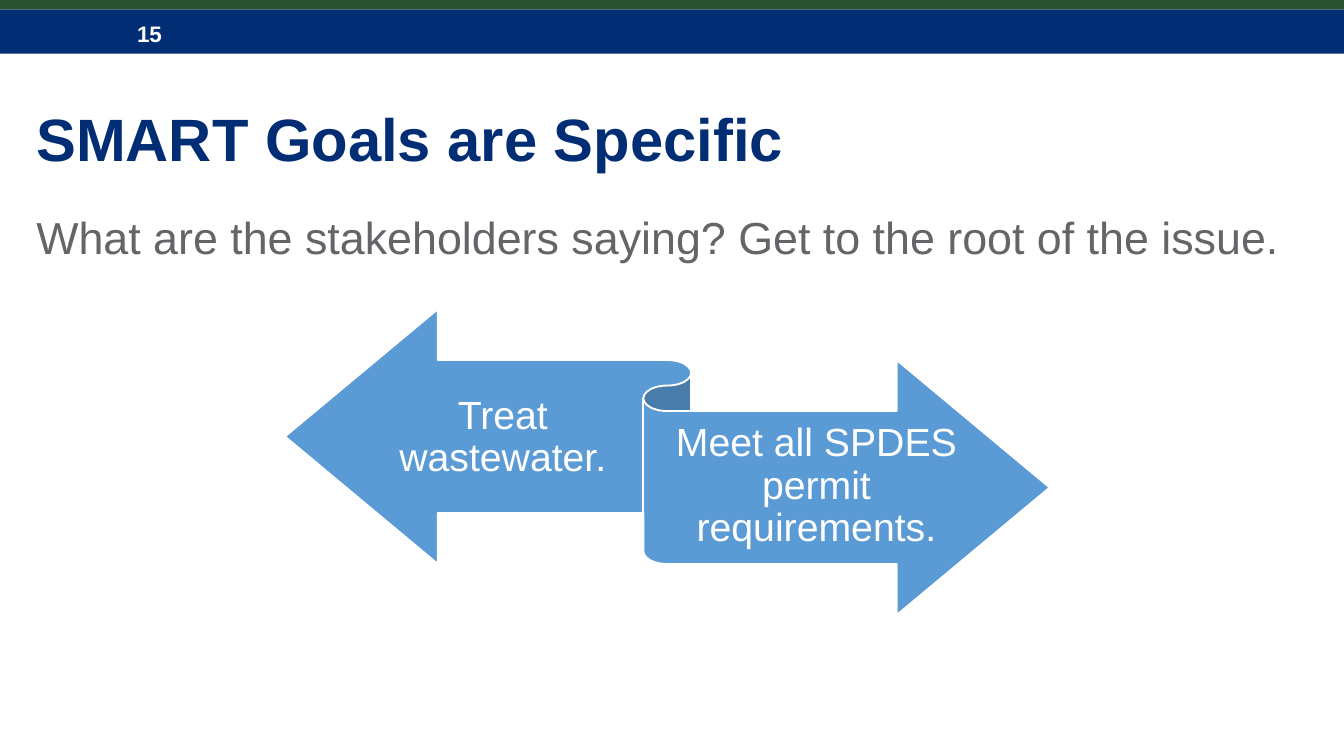
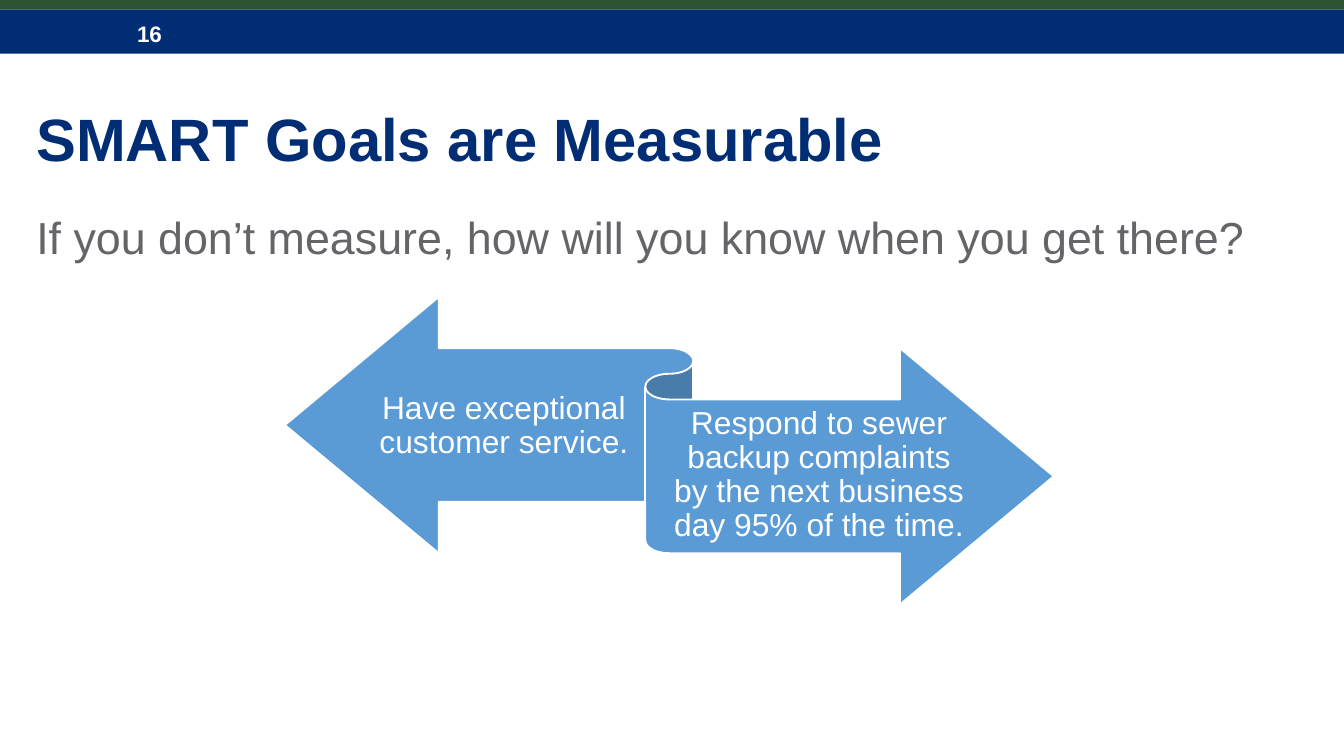
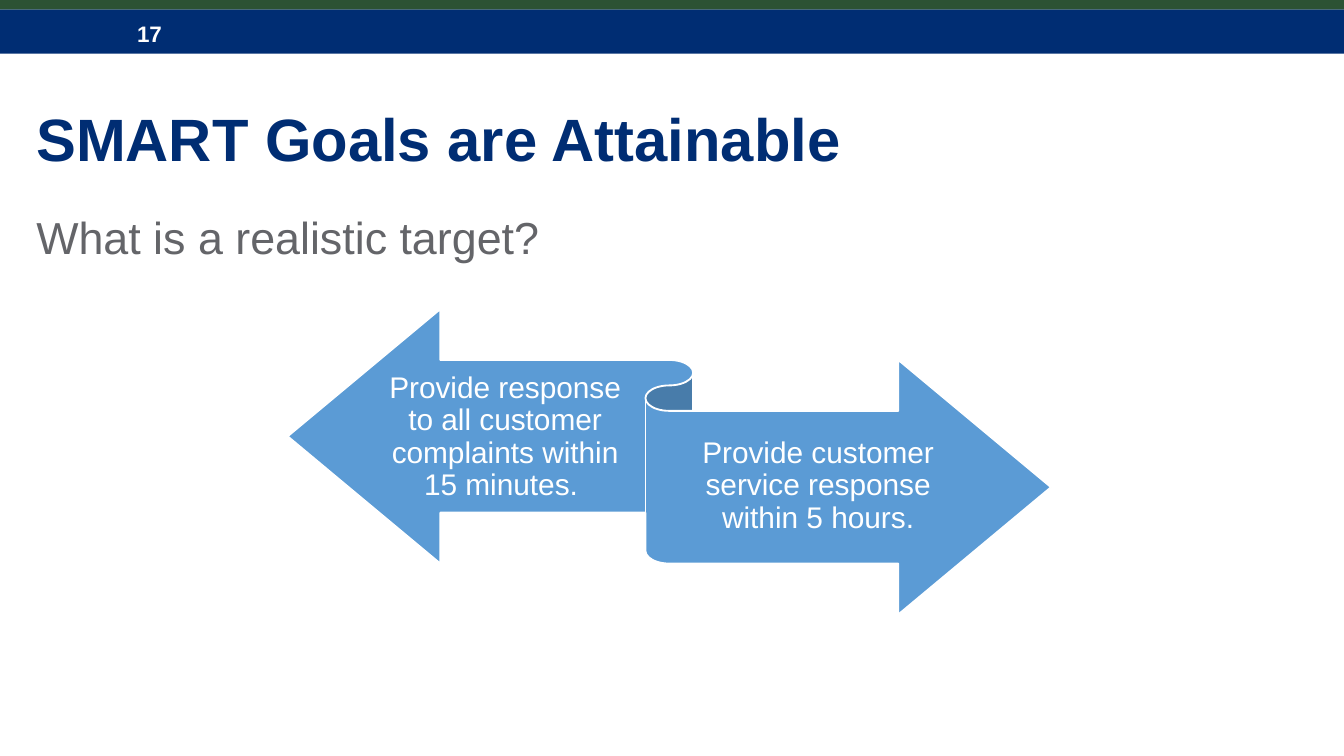
import pptx
import pptx.dml.color
import pptx.enum.shapes
import pptx.enum.text
import pptx.util

Inches, Pt = pptx.util.Inches, pptx.util.Pt
RGBColor = pptx.dml.color.RGBColor
MSO_SHAPE = pptx.enum.shapes.MSO_SHAPE
ANCHOR = pptx.enum.text.MSO_ANCHOR
ALIGN = pptx.enum.text.PP_ALIGN

NAVY = RGBColor(0x00, 0x2D, 0x73)
GREEN = RGBColor(0x2C, 0x52, 0x34)
GREY = RGBColor(0x64, 0x65, 0x69)
BLUE = RGBColor(0x5B, 0x9B, 0xD5)
WHITE = RGBColor(0xFF, 0xFF, 0xFF)
FONT = "Arial"

SLIDE_WIDTH = 10
SLIDE_HEIGHT = SLIDE_WIDTH * 9 / 16
MARGIN, CONTENT_WIDTH = 0.27, 9.42
STRIPE_HEIGHT, BAND_HEIGHT = 0.07, 0.33
TITLE_TOP, TITLE_HEIGHT = 0.55, 1.01
QUESTION_TOP, QUESTION_HEIGHT = 1.56, 3.76
RIBBON_ASPECT = 0.4
# Label areas as shares of the ribbon: left, top, width, height
VAGUE_AREA = (0.12, 0.175, 0.33, 0.49)
SMART_AREA = (0.5, 0.335, 0.39, 0.49)

FIRST_NUMBER = 15
GOALS = [
    {
        "title": "SMART Goals are Specific",
        "question": "What are the stakeholders saying? Get to the root of the issue.",
        "vague": "Treat wastewater.",
        "smart": "Meet all SPDES permit requirements.",
        "label_size": 21,
        "ribbon": (2.12, 2.3, 5.69),  # left, top, width
    },
    {
        "title": "SMART Goals are Measurable",
        "question": "If you don’t measure, how will you know when you get there?",
        "vague": "Have exceptional customer service.",
        "smart": "Respond to sewer backup complaints by the next business day 95% of the time.",
        "label_size": 17,
        "ribbon": (2.12, 2.21, 5.72),
    },
    {
        "title": "SMART Goals are Attainable",
        "question": "What is a realistic target?",
        "vague": "Provide response to all customer complaints within 15 minutes. ",
        "smart": "Provide customer service response within 5 hours.",
        "label_size": 16,
        "ribbon": (2.14, 2.3, 5.68),
    },
]


def add_filled(slide, preset, area, fill, line=None):
    shape = slide.shapes.add_shape(preset, *map(Inches, area))
    shape.shadow.inherit = False
    shape.fill.solid()
    shape.fill.fore_color.rgb = fill
    if line is None:
        shape.line.fill.background()
    else:
        shape.line.color.rgb = line
        shape.line.width = Pt(1)
    return shape


def write(shape, text, size, color, bold=False, anchor=ANCHOR.MIDDLE,
          align=ALIGN.LEFT, spacing=None, insets=(0, 0, 0, 0)):
    """Fill a shape with one styled paragraph; insets are left, top, right, bottom in inches."""
    frame = shape.text_frame
    frame.word_wrap = True
    frame.vertical_anchor = anchor
    (frame.margin_left, frame.margin_top,
     frame.margin_right, frame.margin_bottom) = map(Inches, insets)
    paragraph = frame.paragraphs[0]
    paragraph.text = text
    paragraph.alignment = align
    paragraph.line_spacing = spacing
    paragraph.font.name = FONT
    paragraph.font.size = Pt(size)
    paragraph.font.bold = bold
    paragraph.font.color.rgb = color
    return paragraph


def add_text(slide, area, *args, **style):
    return write(slide.shapes.add_textbox(*map(Inches, area)), *args, **style)


def add_header(slide, number):
    band = add_filled(slide, MSO_SHAPE.RECTANGLE,
                      (0, STRIPE_HEIGHT, SLIDE_WIDTH, BAND_HEIGHT), NAVY)
    write(band, str(number), 12, WHITE, bold=True, insets=(1.02, 0.09, 0.3, 0.06))
    add_filled(slide, MSO_SHAPE.RECTANGLE, (0, 0, SLIDE_WIDTH, STRIPE_HEIGHT), GREEN)


def add_ribbon(slide, goal):
    left, top, width = goal["ribbon"]
    height = width * RIBBON_ASPECT
    add_filled(slide, MSO_SHAPE.LEFT_RIGHT_RIBBON, (left, top, width, height), BLUE, WHITE)
    size = goal["label_size"]
    inset = Pt(size * 0.28).inches
    for label, (x, y, w, h) in ((goal["vague"], VAGUE_AREA), (goal["smart"], SMART_AREA)):
        area = (left + x * width, top + y * height, w * width, h * height)
        add_text(slide, area, label, size, WHITE, align=ALIGN.CENTER,
                 spacing=0.9, insets=(0, inset, 0, inset))


def main():
    deck = pptx.Presentation()
    deck.slide_width, deck.slide_height = Inches(SLIDE_WIDTH), Inches(SLIDE_HEIGHT)
    blank = deck.slide_layouts[6]
    for number, goal in enumerate(GOALS, FIRST_NUMBER):
        slide = deck.slides.add_slide(blank)
        add_header(slide, number)
        add_text(slide, (MARGIN, TITLE_TOP, CONTENT_WIDTH, TITLE_HEIGHT),
                 goal["title"], 32, NAVY, bold=True, spacing=0.9)
        question = add_text(slide, (MARGIN, QUESTION_TOP, CONTENT_WIDTH, QUESTION_HEIGHT),
                            goal["question"], 24, GREY, anchor=ANCHOR.TOP)
        question.space_after = Pt(6)
        add_ribbon(slide, goal)
    deck.save("out.pptx")


if __name__ == "__main__":
    main()
